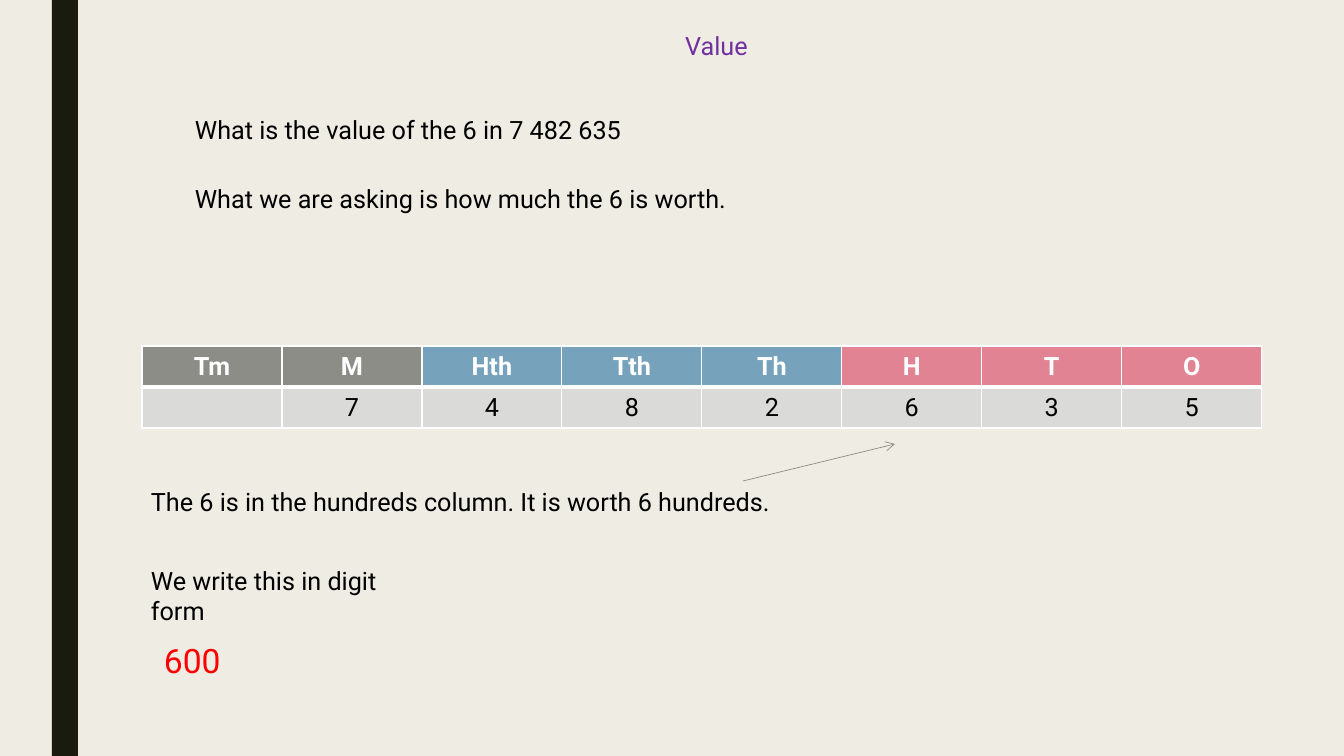
"""Builds a place value slide about the value of a digit."""
from lxml.etree import SubElement
from pptx import Presentation
from pptx.dml.color import RGBColor
from pptx.enum.shapes import MSO_CONNECTOR as Connector, MSO_SHAPE as Shape
from pptx.enum.text import MSO_ANCHOR as Anchor, PP_ALIGN as Align
from pptx.oxml.ns import qn
from pptx.util import Pt

EMU_PER_PX = 914400 / 100.8
FONT = "Roboto"
CREAM = RGBColor(0xEF, 0xED, 0xE3)
DARK = RGBColor(0x19, 0x1B, 0x0E)
PURPLE = RGBColor(0x70, 0x30, 0xA0)
RED = RGBColor(0xFF, 0x00, 0x00)
BLACK = RGBColor(0x00, 0x00, 0x00)
WHITE = RGBColor(0xFF, 0xFF, 0xFF)
GREY = RGBColor(0x8C, 0x8D, 0x86)
BLUE = RGBColor(0x77, 0xA2, 0xBB)
PINK = RGBColor(0xE2, 0x83, 0x94)
PALE = RGBColor(0xDA, 0xDB, 0xD9)

SLIDE_SIZE = (1344, 756)
SIDE_BAR = (52, 0, 26, 756)
TABLE_LEFT, TABLE_TOP, COLUMN_WIDTH, ROW_HEIGHT = 142, 346, 140, 41
ARROW = (743, 481, 895, 444)

TEXTS = [
    ("Value", (210, 25, 1013, 40), 18, PURPLE, Align.CENTER),
    ("What is the value of the 6 in 7 482 635", (185, 109, 455, 40), 18, BLACK, Align.LEFT),
    ("What we are asking is how much the 6 is worth.", (185, 178, 557, 40), 18, BLACK, Align.LEFT),
    ("The 6 is in the hundreds column. It is worth 6 hundreds.", (141, 481, 653, 40), 18, BLACK, Align.LEFT),
    ("We write this in digit form", (141, 560, 300, 70), 18, BLACK, Align.LEFT),
    ("600", (154, 635, 77, 50), 24, RED, Align.LEFT),
]
PLACES = [
    ("Tm", "", GREY), ("M", "7", GREY),
    ("Hth", "4", BLUE), ("Tth", "8", BLUE), ("Th", "2", BLUE),
    ("H", "6", PINK), ("T", "3", PINK), ("O", "5", PINK),
]


def px(length):
    return round(length * EMU_PER_PX)


def format_text(text_frame, text, size, color, align, bold=False):
    text_frame.text = text
    paragraph = text_frame.paragraphs[0]
    paragraph.alignment = align
    for run in paragraph.runs:
        run.font.name = FONT
        run.font.size = Pt(size)
        run.font.bold = bold
        run.font.color.rgb = color


def add_text(slide, text, box, size, color, align):
    text_frame = slide.shapes.add_textbox(*map(px, box)).text_frame
    text_frame.word_wrap = True
    format_text(text_frame, text, size, color, align)


def add_borders(cell, top, bottom):
    properties = cell._tc.get_or_add_tcPr()
    for side, width in (("L", 1), ("R", 1), ("T", top), ("B", bottom)):
        line = SubElement(properties, qn(f"a:ln{side}"), w=str(Pt(width)))
        fill = SubElement(line, qn("a:solidFill"))
        SubElement(fill, qn("a:srgbClr"), val=str(WHITE))


def fill_cell(cell, text, fill, color, bold, top, bottom):
    add_borders(cell, top, bottom)
    cell.fill.solid()
    cell.fill.fore_color.rgb = fill
    cell.vertical_anchor = Anchor.MIDDLE
    format_text(cell.text_frame, text, 18, color, Align.CENTER, bold)


def add_place_table(slide):
    table = slide.shapes.add_table(
        2, len(PLACES), px(TABLE_LEFT), px(TABLE_TOP),
        px(COLUMN_WIDTH * len(PLACES)), px(ROW_HEIGHT * 2)).table
    for row in table.rows:
        row.height = px(ROW_HEIGHT)
    for index, (place, digit, fill) in enumerate(PLACES):
        table.columns[index].width = px(COLUMN_WIDTH)
        fill_cell(table.cell(0, index), place, fill, WHITE, True, 1, 3)
        fill_cell(table.cell(1, index), digit, PALE, BLACK, False, 3, 1)


def add_arrow(slide):
    arrow = slide.shapes.add_connector(Connector.STRAIGHT, *map(px, ARROW))
    arrow.line.color.rgb = GREY
    arrow.line.width = Pt(0.5)
    SubElement(arrow.line._get_or_add_ln(), qn("a:tailEnd"), type="arrow")
    SubElement(arrow._element.spPr, qn("a:effectLst"))


def main():
    presentation = Presentation()
    presentation.slide_width, presentation.slide_height = map(px, SLIDE_SIZE)
    slide = presentation.slides.add_slide(presentation.slide_layouts[6])
    slide.background.fill.solid()
    slide.background.fill.fore_color.rgb = CREAM
    bar = slide.shapes.add_shape(Shape.RECTANGLE, *map(px, SIDE_BAR))
    bar.shadow.inherit = False
    bar.fill.solid()
    bar.fill.fore_color.rgb = DARK
    bar.line.fill.background()
    add_place_table(slide)
    add_arrow(slide)
    for text in TEXTS:
        add_text(slide, *text)
    presentation.save("out.pptx")


if __name__ == "__main__":
    main()
